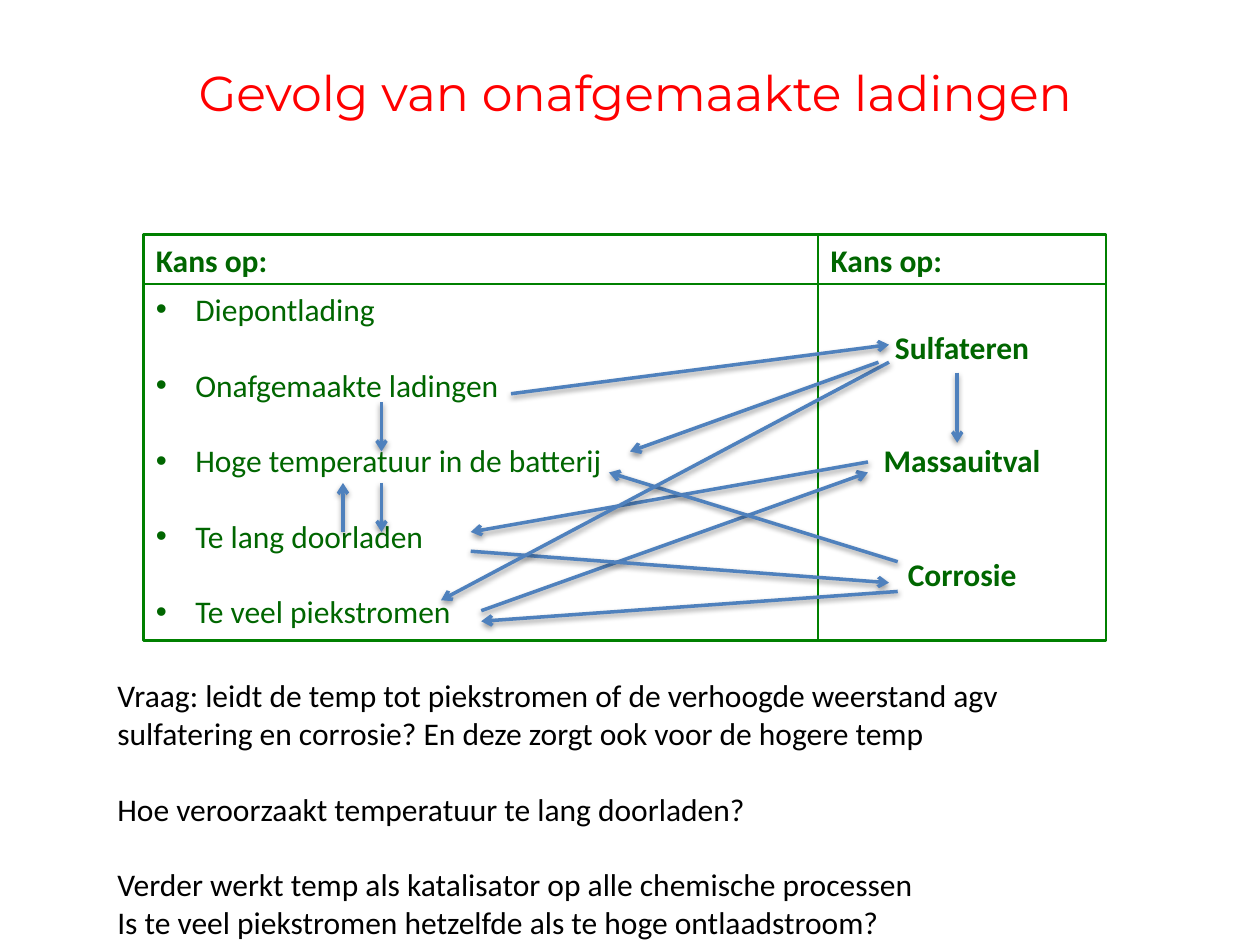
import pptx
import pptx.util
import pptx.dml.color
import pptx.enum.shapes
import pptx.enum.text
import pptx.oxml
import pptx.oxml.ns
from dataclasses import dataclass

Pt = pptx.util.Pt
Align = pptx.enum.text.PP_ALIGN


@dataclass(frozen=True)
class Theme:
    red: str = "FF0000"
    green: str = "006600"
    edge: str = "008000"
    blue: str = "4F81BD"
    black: str = "000000"
    head: str = "Montserrat"
    body: str = "Calibri"
    large: float = 28
    text: float = 18
    row: float = 21.6


theme = Theme()

CAUSES = ["Diepontlading", "Onafgemaakte ladingen",
          "Hoge temperatuur in de batterij", "Te lang doorladen",
          "Te veel piekstromen"]
EFFECTS = ["Sulfateren", "Massauitval", "Corrosie"]
NOTES = ["Vraag: leidt de temp tot piekstromen of de verhoogde weerstand agv "
         "sulfatering en corrosie? En deze zorgt ook voor de hogere temp",
         "Hoe veroorzaakt temperatuur te lang doorladen?",
         "Verder werkt temp als katalisator op alle chemische processen",
         "Is te veel piekstromen hetzelfde als te hoge ontlaadstroom?"]
ARROWS = [
    (193, 215, 414, 136), (414, 130, 187, 170), (114, 170, 114, 142),
    (136, 142, 136, 170), (187, 181, 426, 199), (431, 187, 266, 136),
    (431, 204, 193, 221), (426, 73, 170, 209), (210, 91, 426, 63),
    (136, 96, 136, 124), (465, 79, 465, 119), (420, 73, 278, 124),
]


def color(code):
    return pptx.dml.color.RGBColor.from_string(code)


def add_xml(node, code):
    uri = pptx.oxml.ns.nsdecls("a")
    tag, rest = code.split(" ", 1)
    node.append(pptx.oxml.parse_xml(f"{tag} {uri} {rest}"))


def write(shape, lines, tint, gaps=None, face=theme.body, size=theme.text,
          bold=False, align=Align.LEFT):
    frame = shape.text_frame
    frame.word_wrap = True
    frame.auto_size = pptx.enum.text.MSO_AUTO_SIZE.NONE
    frame.vertical_anchor = pptx.enum.text.MSO_ANCHOR.TOP
    frame.text = "\n".join(lines)
    for para, gap in zip(frame.paragraphs, gaps or [0] * len(lines)):
        para.alignment = align
        para.space_before = Pt(gap)
        font = para.runs[0].font
        font.name, font.size, font.bold = face, Pt(size), bold
        font.color.rgb = color(tint)
    return frame


def add_box(slide, left, top, width, height):
    box = slide.shapes.add_shape(
        pptx.enum.shapes.MSO_SHAPE.RECTANGLE,
        Pt(left), Pt(top), Pt(width), Pt(height))
    box.shadow.inherit = False
    box.fill.background()
    box.line.color.rgb = color(theme.edge)
    box.line.width = Pt(1.25)
    return box


def add_title(slide, left, top, width, height):
    title = slide.shapes.title
    title.left, title.top = Pt(left), Pt(top)
    title.width, title.height = Pt(width), Pt(height)
    write(title, ["Gevolg van onafgemaakte ladingen"], theme.red,
          face=theme.head, size=theme.large, align=Align.CENTER)


def add_arrow(slide, left, top, ends):
    x1, y1, x2, y2 = ends
    arrow = slide.shapes.add_connector(
        pptx.enum.shapes.MSO_CONNECTOR.STRAIGHT,
        Pt(left + x1), Pt(top + y1), Pt(left + x2), Pt(top + y2))
    arrow.line.color.rgb = color(theme.blue)
    arrow.line.width = Pt(2)
    add_xml(arrow.line._get_or_add_ln(), '<a:tailEnd type="arrow"/>')
    add_xml(arrow._element.spPr,
            '<a:effectLst ><a:outerShdw blurRad="40000" dist="20000" '
            'dir="5400000" rotWithShape="0"><a:srgbClr val="000000">'
            '<a:alpha val="38000"/></a:srgbClr></a:outerShdw></a:effectLst>')


def add_panel(slide, left, top, width, height):
    head = 28.2
    split = 385.6
    cols = [(left, split), (left + split, width - split)]
    for x, wide in cols:
        box = add_box(slide, x, top, wide, head)
        write(box, ["Kans op:"], theme.green, bold=True)

    (x1, w1), (x2, w2) = cols
    cause = add_box(slide, x1, top + head, w1, height - head)
    frame = write(cause, CAUSES, theme.green,
                  [0] + [theme.row] * (len(CAUSES) - 1))
    for para in frame.paragraphs:
        props = para._p.get_or_add_pPr()
        props.set("marL", str(Pt(22.5)))
        props.set("indent", str(Pt(-22.5)))
        add_xml(props, '<a:buFont typeface="Arial"/>')
        add_xml(props, '<a:buChar char="•"/>')

    effect = add_box(slide, x2, top + head, w2, height - head)
    frame = write(effect, EFFECTS, theme.green,
                  [0] + [2 * theme.row] * (len(EFFECTS) - 1),
                  bold=True, align=Align.CENTER)
    frame.margin_top = Pt(3.6 + theme.row)

    for ends in ARROWS:
        add_arrow(slide, left, top, ends)


def add_notes(slide, left, top, width, height):
    box = slide.shapes.add_textbox(Pt(left), Pt(top), Pt(width), Pt(height))
    write(box, NOTES, theme.black, [0, theme.row, theme.row, 0])


def main():
    deck = pptx.Presentation()
    deck.slide_width, deck.slide_height = Pt(720), Pt(540)
    slide = deck.slides.add_slide(deck.slide_layouts[5])
    add_title(slide, 20, 32, 686, 57)
    add_panel(slide, 82, 134, 550, 232)
    add_notes(slide, 60, 383, 590, 160)
    deck.save("out.pptx")


if __name__ == "__main__":
    main()
